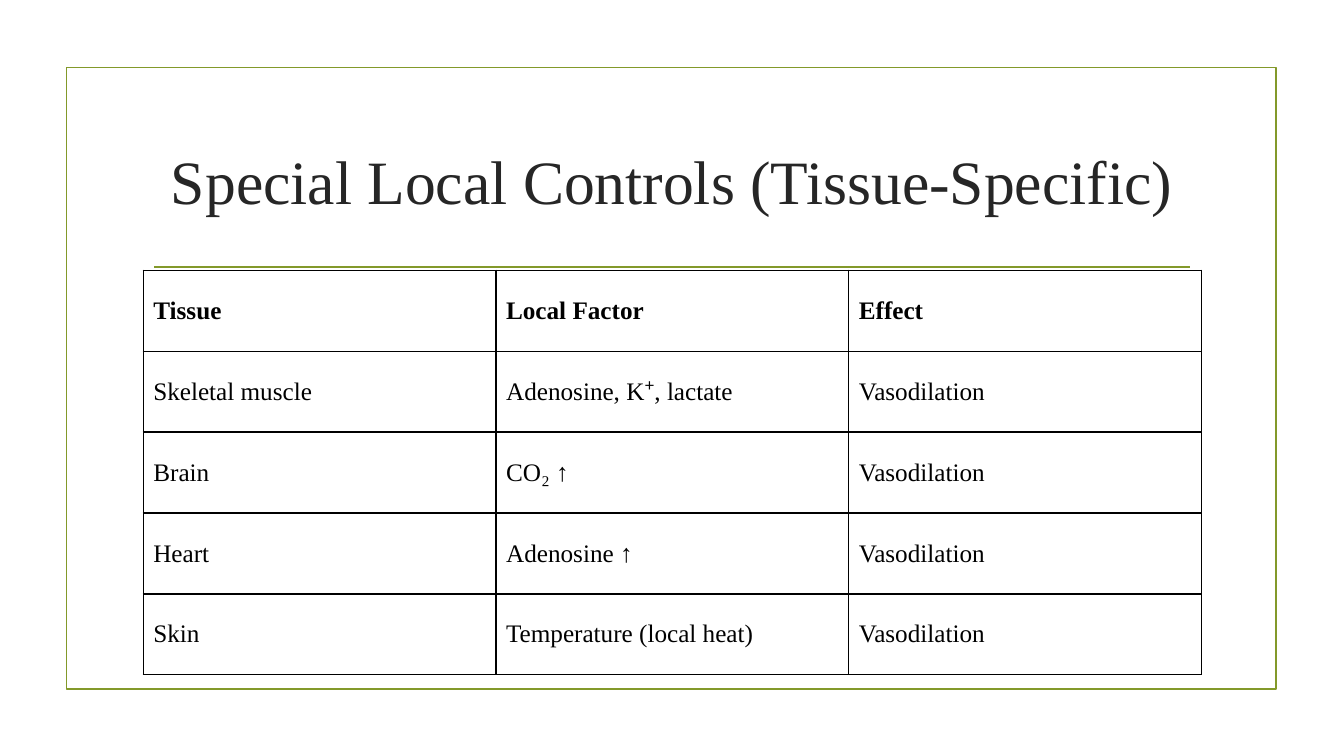
import pptx
import pptx.util
import pptx.dml.color
import pptx.enum.shapes
import pptx.enum.text
import pptx.oxml.ns
import lxml.etree

Cm = pptx.util.Cm
Pt = pptx.util.Pt
SERIF = "Times New Roman"
GREEN = "83992A"


def paint(color_format, value):
    color_format.rgb = pptx.dml.color.RGBColor.from_string(value)


def add_element(parent, tag, **attributes):
    return lxml.etree.SubElement(parent, pptx.oxml.ns.qn(tag), **attributes)


deck = pptx.Presentation()
deck.slide_width = Cm(33.87)
deck.slide_height = Cm(19.05)
slide = deck.slides.add_slide(deck.slide_layouts[5])

frame = slide.shapes.add_shape(
    pptx.enum.shapes.MSO_SHAPE.RECTANGLE, Cm(1.68), Cm(1.7), Cm(30.48), Cm(15.67)
)
frame.shadow.inherit = False
frame.fill.background()

divider = slide.shapes.add_connector(
    pptx.enum.shapes.MSO_CONNECTOR.STRAIGHT, Cm(3.89), Cm(6.73), Cm(30), Cm(6.73)
)
add_element(divider._element.spPr, "a:effectLst")

for outline in (frame.line, divider.line):
    paint(outline.color, GREEN)
    outline.width = Pt(1.25)

heading = slide.shapes.title
heading.left, heading.top = Cm(3.61), Cm(2.72)
heading.width, heading.height = Cm(26.67), Cm(3.63)
heading.text_frame.text = "Special Local Controls (Tissue-Specific)"
heading.text_frame.word_wrap = True
heading.text_frame.auto_size = pptx.enum.text.MSO_AUTO_SIZE.NONE
heading.text_frame.vertical_anchor = pptx.enum.text.MSO_ANCHOR.MIDDLE
heading_line = heading.text_frame.paragraphs[0]
heading_line.alignment = pptx.enum.text.PP_ALIGN.CENTER
heading_line.font.name = SERIF
heading_line.font.size = Pt(44)
paint(heading_line.font.color, "262626")

controls = [
    ("Tissue", "Local Factor", "Effect"),
    ("Skeletal muscle", "Adenosine, K⁺, lactate", "Vasodilation"),
    ("Brain", "CO₂ ↑", "Vasodilation"),
    ("Heart", "Adenosine ↑", "Vasodilation"),
    ("Skin", "Temperature (local heat)", "Vasodilation"),
]
controls_table = slide.shapes.add_table(
    len(controls), 3, Cm(3.61), Cm(6.81), Cm(26.67), Cm(10.2)
).table
controls_table.first_row = False
controls_table.horz_banding = False

for row_index, row in enumerate(controls):
    for column_index, wording in enumerate(row):
        cell = controls_table.cell(row_index, column_index)
        cell.text = wording
        cell.vertical_anchor = pptx.enum.text.MSO_ANCHOR.MIDDLE
        entry = cell.text_frame.paragraphs[0]
        entry.font.name = SERIF
        entry.font.size = Pt(18)
        entry.font.bold = row_index == 0
        paint(entry.font.color, "000000")
        cell_properties = cell._tc.get_or_add_tcPr()
        for side in ("a:lnL", "a:lnR", "a:lnT", "a:lnB"):
            border = add_element(cell_properties, side, w=str(Pt(1)))
            add_element(add_element(border, "a:solidFill"), "a:srgbClr", val="000000")
        cell.fill.background()

deck.save("out.pptx")
